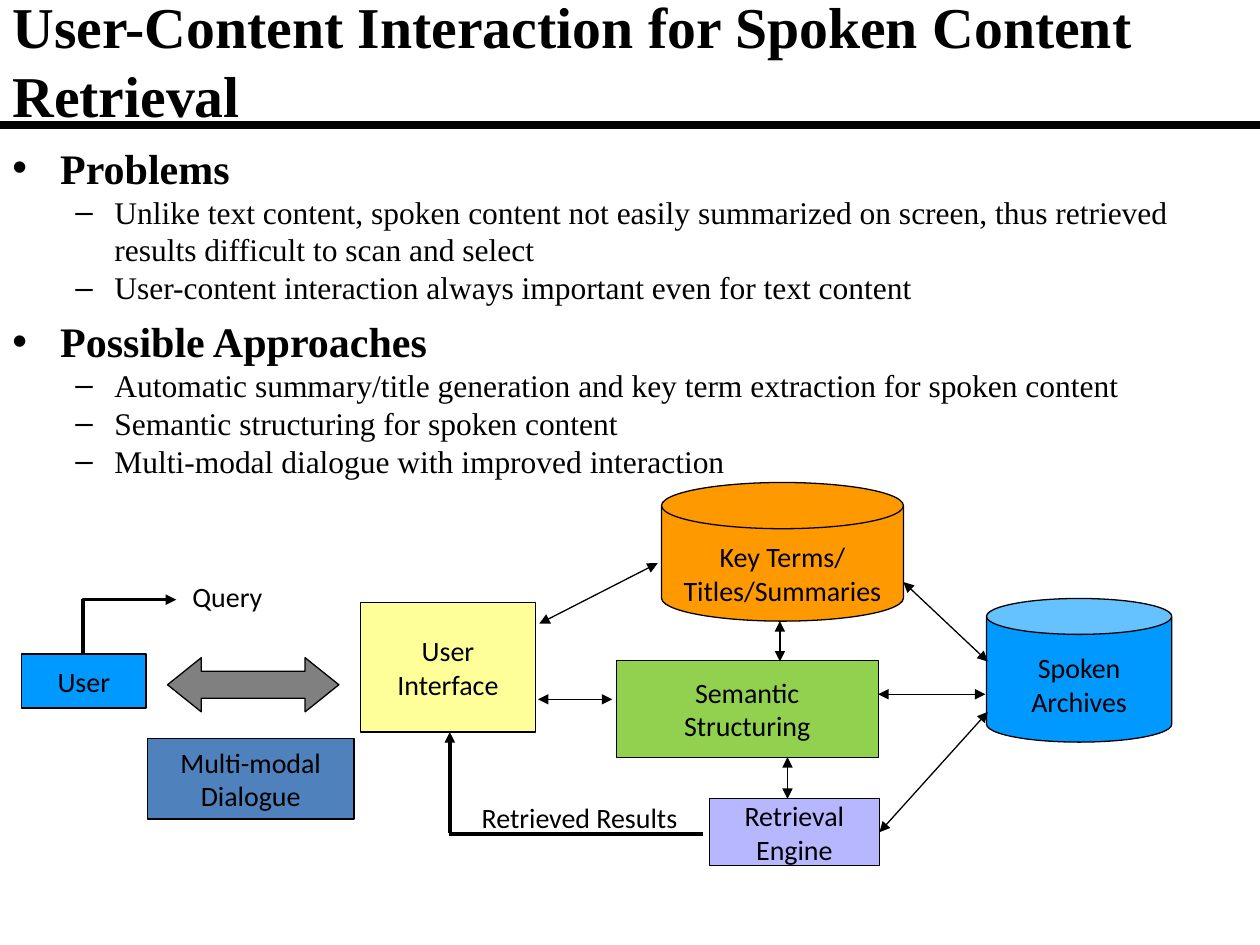
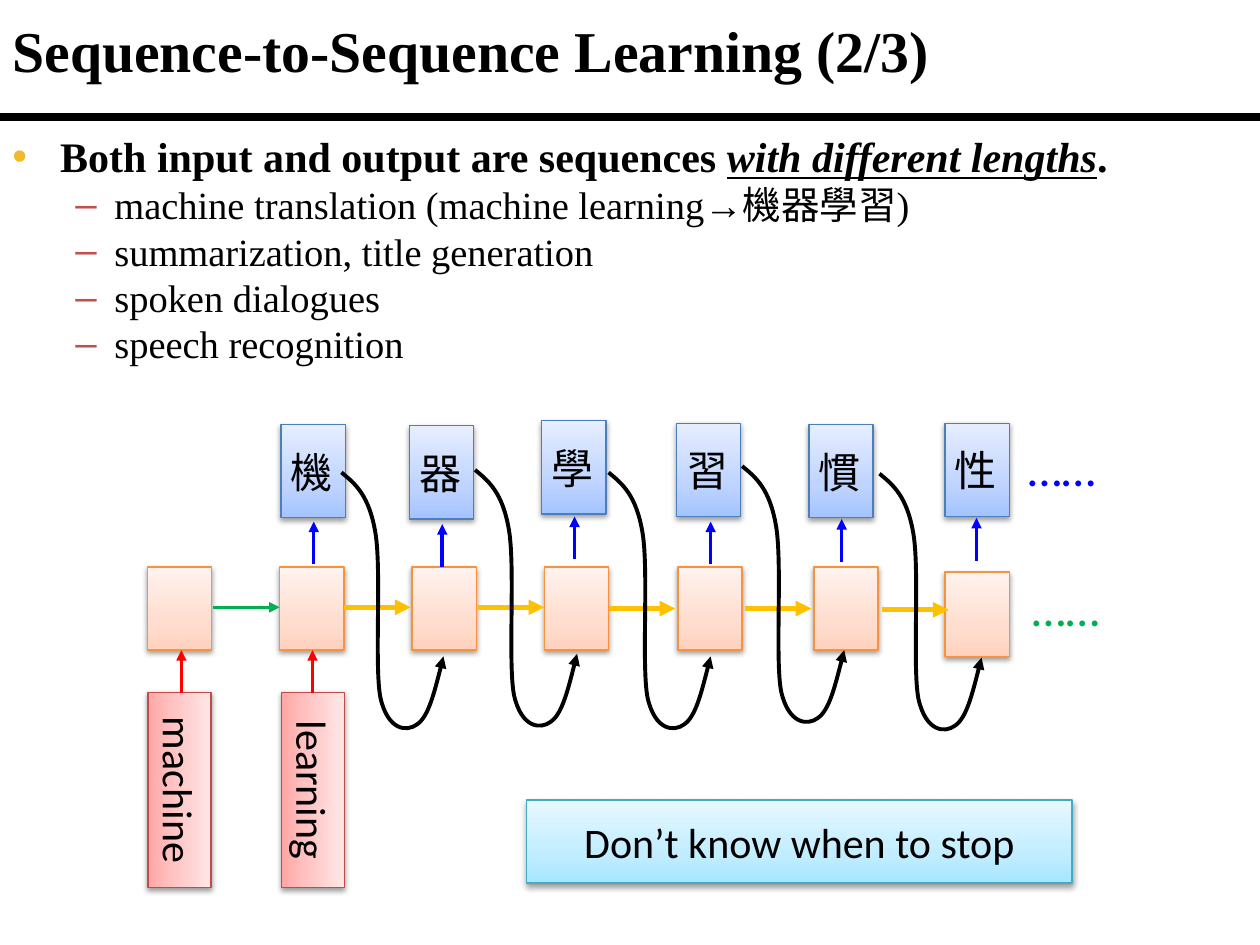
from dataclasses import dataclass
from typing import Any

from lxml.etree import SubElement
from pptx import Presentation
from pptx.dml.color import RGBColor
from pptx.enum.shapes import MSO_CONNECTOR, MSO_SHAPE
from pptx.enum.text import MSO_ANCHOR, PP_ALIGN
from pptx.oxml.ns import qn
from pptx.util import Inches, Pt

COLORS = {
    "black": "000000", "gold_bullet": "F0BA30", "red_bullet": "C0504D",
    "orange": "FF9900", "blue": "0099FF", "gray": "808080", "steel": "4F81BD",
    "lilac": "B7B7FF", "yellow": "FFFF99", "green": "92D050",
    "red_arrow": "FF0000", "blue_arrow": "0000FF", "green_arrow": "00B050",
    "gold_arrow": "FFC000",
}
# Gradient stops from bottom to top, then the outline
GRADIENTS = {
    "word": ("FFA6A5", "FFC0BF", "FFE7E7", "BF4C48"),
    "state": ("FFD2BD", "FFDED0", "FFF2ED", "F69240"),
    "card": ("A4C4FF", "BFD4FF", "E6EEFF", "4B7EBC"),
    "banner": ("A7E6FF", "C1EDFF", "E7F8FF", "46AAC5"),
}
TITLE_FONT, LABEL_FONT, BULLET_FONT = "Times New Roman", "Calibri", "Arial"
INDENTS = ((0.38, -0.38, "•"), (0.81, -0.31, "–"))


def rgb(name):
    return RGBColor.from_string(COLORS[name])


def set_font(font, name, size, color="black", bold=False):
    font.name, font.size, font.bold = name, Pt(size), bold
    font.color.rgb = rgb(color)


def write_label(shape, text, size=16, color="black", align=PP_ALIGN.CENTER,
                anchor=MSO_ANCHOR.MIDDLE):
    frame = shape.text_frame
    frame.word_wrap = True
    frame.vertical_anchor = anchor
    frame.text = text
    for paragraph in frame.paragraphs:
        paragraph.alignment = align
        set_font(paragraph.font, LABEL_FONT, size, color)


def style_line(shape, color, width, ends=("tailEnd",)):
    shape.line.color.rgb = rgb(color)
    shape.line.width = Pt(width)
    line = shape.line._get_or_add_ln()
    for end in ends:
        SubElement(line, qn(f"a:{end}"), type="triangle")


def apply_gradient(shape, name):
    *stops, outline = GRADIENTS[name]
    shape.fill.gradient()
    shape.fill.gradient_angle = 90
    properties = shape._element.spPr
    stop_list = properties.find(qn("a:gradFill")).find(qn("a:gsLst"))
    stop_list.clear()
    for position, color in zip((0, 35000, 100000), stops):
        stop = SubElement(stop_list, qn("a:gs"), pos=str(position))
        SubElement(stop, qn("a:srgbClr"), val=color)
    shape.line.color.rgb = RGBColor.from_string(outline)
    shape.line.width = Pt(0.75)
    # Soft shadow just below the box
    shadow = SubElement(properties.find(qn("a:effectLst")), qn("a:outerShdw"),
                        blurRad="40000", dist="20000", dir="5400000", rotWithShape="0")
    shade = SubElement(shadow, qn("a:srgbClr"), val=COLORS["black"])
    SubElement(shade, qn("a:alpha"), val="38000")


@dataclass
class Region:
    """An area of a slide; positions inside it count from its corner."""
    slide: Any
    left: float
    top: float

    def at(self, x, y):
        return Inches(self.left + x), Inches(self.top + y)

    def shape(self, kind, x, y, width, height):
        shape = self.slide.shapes.add_shape(
            kind, *self.at(x, y), Inches(width), Inches(height))
        shape.shadow.inherit = False
        return shape

    def node(self, kind, x, y, width, height, fill):
        shape = self.shape(kind, x, y, width, height)
        shape.fill.solid()
        shape.fill.fore_color.rgb = rgb(fill)
        style_line(shape, "black", 0.75, ())
        return shape

    def gradient_box(self, x, y, width, height, gradient):
        shape = self.shape(MSO_SHAPE.RECTANGLE, x, y, width, height)
        apply_gradient(shape, gradient)
        return shape

    def caption(self, x, y, width, height, text, **style):
        box = self.slide.shapes.add_textbox(
            *self.at(x, y), Inches(width), Inches(height))
        write_label(box, text, **style)

    def line(self, start, end, color="black", width=0.75, ends=("tailEnd",),
             kind=MSO_CONNECTOR.STRAIGHT):
        connector = self.slide.shapes.add_connector(
            kind, *self.at(*start), *self.at(*end))
        style_line(connector, color, width, ends)
        SubElement(connector._element.spPr, qn("a:effectLst"))
        return connector


def add_title(slide, text, top, rule_y):
    region = Region(slide, 0, 0)
    region.line((0, rule_y), (10, rule_y), width=4.5, ends=())
    box = slide.shapes.add_textbox(0, Inches(top), Inches(10), Inches(0.79))
    write_label(box, text, align=PP_ALIGN.LEFT)
    set_font(box.text_frame.paragraphs[0].font, TITLE_FONT, 33, bold=True)


def add_bullets(slide, top, height, items, sub_size, bullet_colors):
    """Each item is a level and a text, or a level and a list of (text, emphasis)."""
    box = slide.shapes.add_textbox(0, Inches(top), Inches(10), Inches(height))
    frame = box.text_frame
    frame.word_wrap = True
    for number, (level, content) in enumerate(items):
        paragraph = frame.add_paragraph() if number else frame.paragraphs[0]
        paragraph.level = level
        paragraph.space_before = Pt(0 if level else 5.5)
        set_font(paragraph.font, TITLE_FONT, sub_size if level else 24, bold=not level)
        runs = [(content, False)] if isinstance(content, str) else content
        for text, emphasis in runs:
            run = paragraph.add_run()
            run.text = text
            if emphasis:
                run.font.italic = run.font.underline = True
        # Hanging bullet
        margin, indent, mark = INDENTS[level]
        properties = paragraph._p.get_or_add_pPr()
        properties.set("marL", str(Inches(margin)))
        properties.set("indent", str(Inches(indent)))
        default_font = properties.find(qn("a:defRPr"))
        bullet_color = SubElement(properties, qn("a:buClr"))
        SubElement(bullet_color, qn("a:srgbClr"), val=COLORS[bullet_colors[level]])
        SubElement(properties, qn("a:buFont"), typeface=BULLET_FONT)
        SubElement(properties, qn("a:buChar"), char=mark)
        properties.append(default_font)


def draw_retrieval_diagram(slide, left, top):
    region = Region(slide, left, top)

    # Stores
    key_terms = region.node(MSO_SHAPE.FLOWCHART_MAGNETIC_DISK, 5.25, 0.03, 1.92, 1.1, "orange")
    key_terms.text_frame.margin_top = Inches(0.2)
    key_terms.text_frame.margin_bottom = Inches(0.04)
    write_label(key_terms, "Key Terms/\nTitles/Summaries")
    archives = region.node(MSO_SHAPE.CAN, 7.83, 0.95, 1.47, 1.14, "blue")
    write_label(archives, "Spoken\nArchives", anchor=MSO_ANCHOR.BOTTOM)

    # Modules
    boxes = {}
    for text, x, y, width, height, fill in (
        ("User", 0.17, 1.39, 0.99, 0.43, "blue"),
        ("Multi-modal Dialogue", 1.17, 2.06, 1.64, 0.64, "steel"),
        ("User\nInterface", 2.86, 0.98, 1.39, 1.03, "yellow"),
        ("Semantic\nStructuring", 4.89, 1.44, 2.08, 0.77, "green"),
        ("Retrieval\nEngine", 5.63, 2.54, 1.35, 0.53, "lilac"),
    ):
        boxes[text] = region.node(MSO_SHAPE.RECTANGLE, x, y, width, height, fill)
        write_label(boxes[text], text)
    dialogue = region.node(MSO_SHAPE.LEFT_RIGHT_ARROW, 1.33, 1.42, 1.36, 0.43, "gray")
    dialogue.adjustments[0], dialogue.adjustments[1] = 0.5, 0.623

    # Query and results
    region.caption(1.4, 0.75, 0.81, 0.37, "Query")
    query = region.line((1.4, 0.96), (0.66, 1.39), width=2, ends=("headEnd",),
                        kind=MSO_CONNECTOR.ELBOW)
    query._element.spPr.find(qn("a:prstGeom")).set("prst", "bentConnector2")
    region.caption(3.53, 2.5, 2.14, 0.37, "Retrieved Results")
    region.line((5.58, 2.82), (3.56, 2.82), width=2, ends=())
    region.line((3.57, 2.81), (3.57, 2.01), width=2)

    # Two-way links
    both = ("headEnd", "tailEnd")
    for start, end in (
        ((7.17, 0.82), (7.84, 1.45)),
        ((5.22, 0.67), (4.28, 1.15)),
        ((6.19, 1.13), (6.19, 1.45)),
        ((6.25, 2.21), (6.25, 2.54)),
        ((4.27, 1.75), (4.86, 1.75)),
        ((6.97, 1.71), (7.82, 1.71)),
    ):
        region.line(start, end, ends=both)
    engine_link = region.line((6.98, 2.8), (7.84, 1.85), ends=both)
    engine_link.begin_connect(boxes["Retrieval\nEngine"], 3)


# Feedback curve from an output to the next state: control points of four cubics
FEEDBACK = (
    (0.11, 0.09), (0.22, 0.18), (0.27, 0.48),
    (0.32, 0.78), (0.26, 1.54), (0.31, 1.79),
    (0.37, 2.05), (0.52, 2.06), (0.6, 2),
    (0.69, 1.94), (0.75, 1.7), (0.81, 1.46),
)


def draw_feedback(region, x, y):
    builder = region.slide.shapes.build_freeform(*region.at(x, y))
    builder.add_line_segments(
        [region.at(x + dx, y + dy) for dx, dy in FEEDBACK], close=False)
    curve = builder.convert_to_shape()
    # Turn each three line points into one cubic segment
    segments = list(curve._element.spPr.iter(qn("a:lnTo")))
    outline = segments[0].getparent()
    for first in range(0, len(segments), 3):
        cubic = SubElement(outline, qn("a:cubicBezTo"))
        for segment in segments[first:first + 3]:
            cubic.append(segment[0])
            outline.remove(segment)
    curve.shadow.inherit = False
    curve.fill.background()
    style_line(curve, "black", 2.25)


def draw_sequence_diagram(slide, left, top):
    region = Region(slide, left, top)
    box_width = 0.51

    # Recurrent states
    for x in (0, 1.05, 2.1, 3.15, 4.21, 5.29):
        region.gradient_box(x, 1.2, box_width, 0.66, "state")
    region.gradient_box(6.33, 1.24, box_width, 0.67, "state")

    # Input words, turned to read downwards
    for word, x, arrow_x in (("machine", -0.52, 0.27), ("learning", 0.54, 1.31)):
        box = region.gradient_box(x, 2.72, 1.55, 0.5, "word")
        box.rotation = 90
        write_label(box, word, size=24)
        region.line((arrow_x, 2.2), (arrow_x, 1.86), "red_arrow", 2)

    # Output characters, each with its arrow
    for character, x, y, arrow_x, tip in (
        ("機", 1.06, 0.07, 1.32, 0.84), ("器", 2.08, 0.08, 2.34, 0.86),
        ("學", 3.13, 0.04, 3.39, 0.8), ("習", 4.2, 0.06, 4.47, 0.84),
        ("慣", 5.25, 0.07, 5.51, 0.82), ("性", 6.33, 0.06, 6.58, 0.81),
    ):
        region.gradient_box(x, y, box_width, 0.74, "card")
        region.caption(x - 0.1, y + 0.12, 0.69, 0.5, character, size=24)
        region.line((arrow_x, tip + 0.34), (arrow_x, tip), "blue_arrow", 2)

    # Links between states
    region.line((0.52, 1.52), (1.05, 1.52), "green_arrow", 2)
    for x, y in ((1.56, 1.52), (2.62, 1.52), (3.66, 1.53), (4.74, 1.53), (5.83, 1.54)):
        region.line((x, y), (x + 0.53, y), "gold_arrow", 3)

    for x, y in ((1.54, 0.45), (2.6, 0.43), (3.66, 0.45), (4.72, 0.4), (5.81, 0.46)):
        draw_feedback(region, x, y)

    # Continuation dots and closing remark
    for x, y, color in ((6.92, 1.23, "green_arrow"), (6.89, 0.12, "blue_arrow")):
        region.caption(x, y, 1.21, 0.57, "……", size=28, color=color, align=PP_ALIGN.LEFT)
    banner = region.gradient_box(3.01, 3.05, 4.33, 0.66, "banner")
    write_label(banner, "Don’t know when to stop", size=24)


def build_retrieval_slide(slide):
    add_title(slide, "User-Content Interaction for Spoken Content Retrieval", 0.08, 0.99)
    add_bullets(slide, 1.08, 2.81, (
        (0, "Problems"),
        (1, "Unlike text content, spoken content not easily summarized on screen, "
            "thus retrieved results difficult to scan and select"),
        (1, "User-content interaction always important even for text content"),
        (0, "Possible Approaches"),
        (1, "Automatic summary/title generation and key term extraction for spoken content"),
        (1, "Semantic structuring for spoken content"),
        (1, "Multi-modal dialogue with improved interaction"),
    ), 18, ("black", "black"))
    draw_retrieval_diagram(slide, 0, 3.8)


def build_sequence_slide(slide):
    add_title(slide, "Sequence-to-Sequence Learning (2/3)", 0, 0.93)
    add_bullets(slide, 0.99, 2.12, (
        (0, [("Both input and output are sequences ", False),
             ("with different lengths", True), (".", False)]),
        (1, "machine translation (machine learning→機器學習)"),
        (1, "summarization, title generation"),
        (1, "spoken dialogues"),
        (1, "speech recognition"),
    ), 22, ("gold_bullet", "red_bullet"))
    draw_sequence_diagram(slide, 1.17, 3.3)


def main():
    presentation = Presentation()
    presentation.slide_width, presentation.slide_height = Inches(10), Inches(7.5)
    for build in (build_retrieval_slide, build_sequence_slide):
        build(presentation.slides.add_slide(presentation.slide_layouts[6]))
    presentation.save("out.pptx")


if __name__ == "__main__":
    main()
